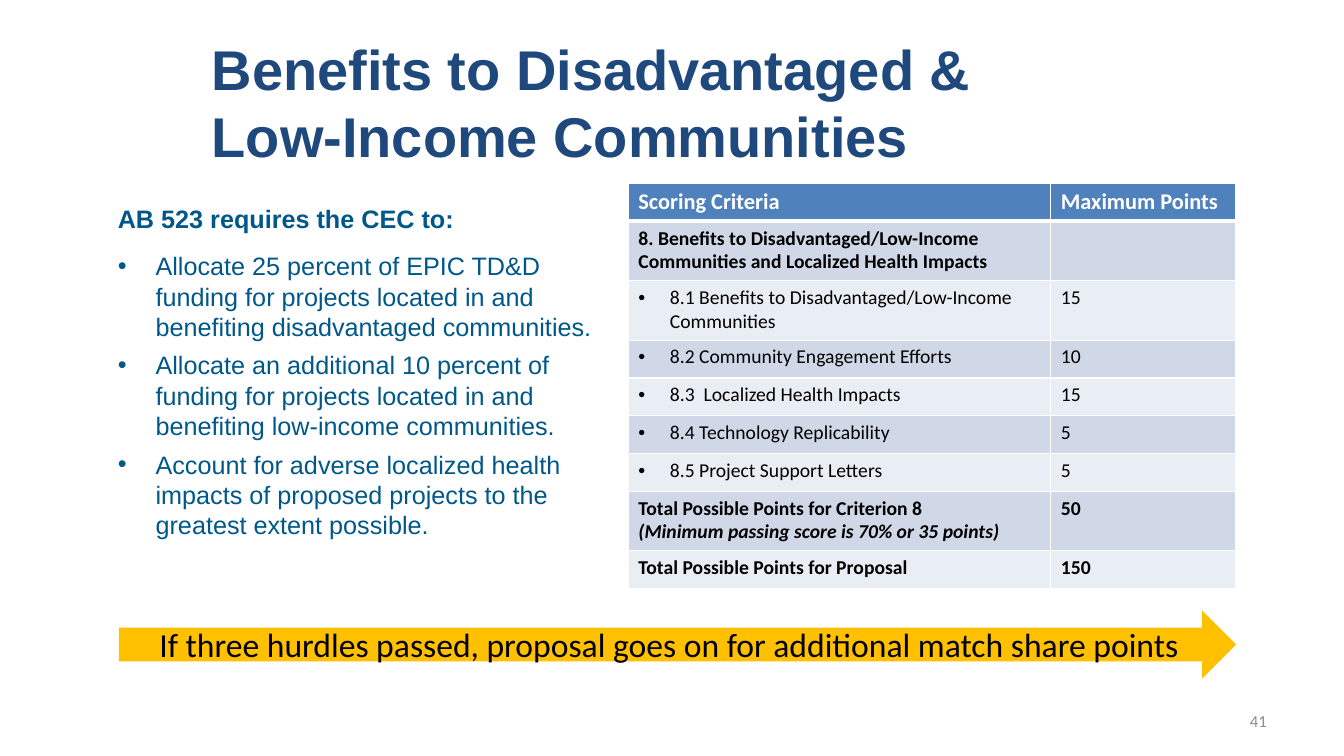
from dataclasses import dataclass

from lxml import etree
from pptx import Presentation
from pptx.dml.color import RGBColor
from pptx.enum.shapes import MSO_SHAPE
from pptx.enum.text import MSO_ANCHOR, MSO_AUTO_SIZE, PP_ALIGN
from pptx.oxml.ns import qn
from pptx.slide import Slide
from pptx.table import _Cell
from pptx.text.text import TextFrame, _Paragraph
from pptx.util import Emu, Inches, Pt

RIGHT_ARROW = MSO_SHAPE.RIGHT_ARROW
TOP, MIDDLE = MSO_ANCHOR.TOP, MSO_ANCHOR.MIDDLE
NO_AUTOFIT = MSO_AUTO_SIZE.NONE
LEFT, CENTER, RIGHT = PP_ALIGN.LEFT, PP_ALIGN.CENTER, PP_ALIGN.RIGHT

SLIDE_WIDTH, SLIDE_HEIGHT = Inches(13.33), Inches(7.5)
GRID_COLUMNS, GRID_ROWS = 160, 90
TITLE_ONLY_LAYOUT = 5


@dataclass(frozen=True)
class Style:
    font: str
    size: int
    color: str
    bold: bool = False
    italic: bool = False


@dataclass(frozen=True)
class Theme:
    title: Style = Style("Arial", 40, "1F497D", bold=True)
    lead: Style = Style("Arial", 18, "00588A", bold=True)
    body: Style = Style("Arial", 18, "00588A")
    header: Style = Style("Calibri", 16, "FFFFFF", bold=True)
    criterion: Style = Style("Calibri", 14, "000000")
    total: Style = Style("Calibri", 14, "000000", bold=True)
    remark: Style = Style("Calibri", 14, "000000", bold=True, italic=True)
    arrow: Style = Style("Calibri", 24, "000000")
    number: Style = Style("Calibri", 12, "8C8C8C")
    header_fill: str = "4F81BD"
    band_fills: tuple[str, str] = ("D0D8E8", "E9EDF4")
    arrow_fill: str = "FFC000"
    border: str = "FFFFFF"


@dataclass(frozen=True)
class Area:
    column: float
    row: float
    columns: float
    rows: float

    def box(self) -> tuple[Emu, Emu, Emu, Emu]:
        return across(self.column), down(self.row), across(self.columns), down(self.rows)


@dataclass(frozen=True)
class Line:
    text: str
    style: Style
    align: PP_ALIGN = LEFT
    space_after: float = 0
    bullet_indent: float = 0


@dataclass(frozen=True)
class ScoreRow:
    lines: tuple[Line, ...]
    points: str
    rows: float


THEME = Theme()
SINGLE_ROW, DOUBLE_ROW = 4.5, 7.08
SCORE_COLUMNS = (50.3, 22)
BODY_INDENT, CRITERION_INDENT = 4.5, 3.75

TITLE_AREA = Area(24, 3.25, 130.7, 17.75)
BODY_AREA = Area(12.85, 23.65, 60.1, 46.45)
TABLE_AREA = Area(74.8, 21.85, sum(SCORE_COLUMNS), 48.24)
ARROW_AREA = Area(14.15, 72.7, 133, 8.05)
NUMBER_AREA = Area(114.7, 83.4, 37.3, 4.8)

DUTIES = (
    "Allocate 25 percent of EPIC TD&D funding for projects located in and benefiting disadvantaged communities.",
    "Allocate an additional 10 percent of funding for projects located in and benefiting low-income communities.",
    "Account for adverse localized health impacts of proposed projects to the greatest extent possible.",
)


def criterion(text: str, points: str, rows: float = SINGLE_ROW) -> ScoreRow:
    return ScoreRow((Line(text, THEME.criterion, bullet_indent=CRITERION_INDENT),), points, rows)


SCORES = (
    ScoreRow((Line("Scoring Criteria", THEME.header),), "Maximum Points", SINGLE_ROW),
    ScoreRow(
        (Line("8. Benefits to Disadvantaged/Low-Income Communities and Localized Health Impacts", THEME.total),),
        "",
        DOUBLE_ROW,
    ),
    criterion("8.1 Benefits to Disadvantaged/Low-Income Communities", "15", DOUBLE_ROW),
    criterion("8.2 Community Engagement Efforts", "10"),
    criterion("8.3  Localized Health Impacts", "15"),
    criterion("8.4 Technology Replicability", "5"),
    criterion("8.5 Project Support Letters", "5"),
    ScoreRow(
        (
            Line("Total Possible Points for Criterion 8", THEME.total),
            Line("(Minimum passing score is 70% or 35 points)", THEME.remark),
        ),
        "50",
        DOUBLE_ROW,
    ),
    ScoreRow((Line("Total Possible Points for Proposal", THEME.total),), "150", SINGLE_ROW),
)


def across(columns: float) -> Emu:
    return Emu(round(SLIDE_WIDTH * columns / GRID_COLUMNS))


def down(rows: float) -> Emu:
    return Emu(round(SLIDE_HEIGHT * rows / GRID_ROWS))


def add_bullet(paragraph: _Paragraph, indent: float) -> None:
    properties = paragraph._p.get_or_add_pPr()
    properties.set("marL", str(across(indent)))
    properties.set("indent", str(-across(indent)))
    etree.SubElement(properties, qn("a:buFont"), typeface="Arial")
    etree.SubElement(properties, qn("a:buChar"), char="•")


def write(frame: TextFrame, lines: tuple[Line, ...]) -> None:
    for index, line in enumerate(lines):
        paragraph = frame.add_paragraph() if index else frame.paragraphs[0]
        paragraph.text = line.text
        paragraph.alignment = line.align
        paragraph.space_after = Pt(line.space_after)
        if line.bullet_indent:
            add_bullet(paragraph, line.bullet_indent)
        font = paragraph.font
        font.name, font.size = line.style.font, Pt(line.style.size)
        font.bold, font.italic = line.style.bold, line.style.italic
        font.color.rgb = RGBColor.from_string(line.style.color)


def fill_frame(frame: TextFrame, lines: tuple[Line, ...], anchor: MSO_ANCHOR) -> None:
    frame.word_wrap = True
    frame.auto_size = NO_AUTOFIT
    frame.vertical_anchor = anchor
    write(frame, lines)


def add_text(slide: Slide, area: Area, lines: tuple[Line, ...], anchor: MSO_ANCHOR) -> None:
    fill_frame(slide.shapes.add_textbox(*area.box()).text_frame, lines, anchor)


def place_title(slide: Slide, text: str) -> None:
    title = slide.shapes.title
    title.left, title.top, title.width, title.height = TITLE_AREA.box()
    fill_frame(title.text_frame, (Line(text, THEME.title),), MIDDLE)


def format_cell(cell: _Cell, fill: str, bottom_width: float) -> None:
    properties = cell._tc.get_or_add_tcPr()
    for side, width in (("lnL", 1), ("lnR", 1), ("lnT", 1), ("lnB", bottom_width)):
        border = etree.SubElement(properties, qn(f"a:{side}"), w=str(Pt(width)))
        solid = etree.SubElement(border, qn("a:solidFill"))
        etree.SubElement(solid, qn("a:srgbClr"), val=THEME.border)
    cell.fill.solid()
    cell.fill.fore_color.rgb = RGBColor.from_string(fill)


def add_scores(slide: Slide) -> None:
    table = slide.shapes.add_table(len(SCORES), len(SCORE_COLUMNS), *TABLE_AREA.box()).table
    for column, columns in zip(table.columns, SCORE_COLUMNS):
        column.width = across(columns)
    for index, score in enumerate(SCORES):
        table.rows[index].height = down(score.rows)
        fill = THEME.band_fills[(index - 1) % 2] if index else THEME.header_fill
        points = (Line(score.points, score.lines[0].style),)
        for cell, lines in zip(table.rows[index].cells, (score.lines, points)):
            format_cell(cell, fill, 1 if index else 3)
            write(cell.text_frame, lines)


def add_arrow(slide: Slide, text: str) -> None:
    arrow = slide.shapes.add_shape(RIGHT_ARROW, *ARROW_AREA.box())
    arrow.shadow.inherit = False
    arrow.fill.solid()
    arrow.fill.fore_color.rgb = RGBColor.from_string(THEME.arrow_fill)
    arrow.line.fill.background()
    fill_frame(arrow.text_frame, (Line(text, THEME.arrow, CENTER),), MIDDLE)


def main() -> None:
    presentation = Presentation()
    presentation.slide_width, presentation.slide_height = SLIDE_WIDTH, SLIDE_HEIGHT
    slide = presentation.slides.add_slide(presentation.slide_layouts[TITLE_ONLY_LAYOUT])
    place_title(slide, "Benefits to Disadvantaged & \vLow-Income Communities")
    lead = Line("AB 523 requires the CEC to:", THEME.lead, space_after=12)
    duties = tuple(Line(duty, THEME.body, space_after=6, bullet_indent=BODY_INDENT) for duty in DUTIES)
    add_text(slide, BODY_AREA, (lead, *duties), TOP)
    add_scores(slide)
    add_arrow(slide, "If three hurdles passed, proposal goes on for additional match share points")
    add_text(slide, NUMBER_AREA, (Line("41", THEME.number, RIGHT),), MIDDLE)
    presentation.save("out.pptx")


if __name__ == "__main__":
    main()
